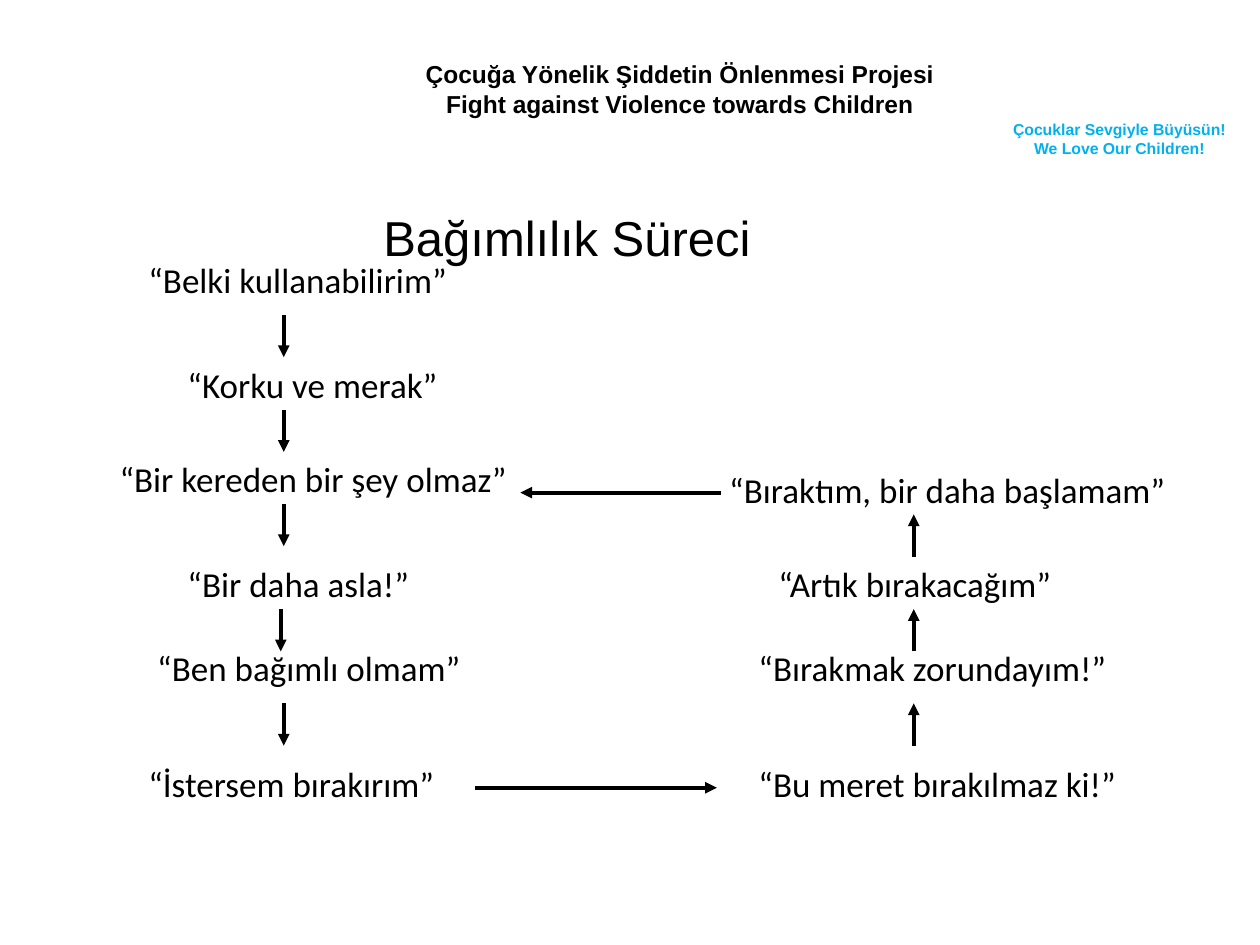
from lxml import etree
from pptx import Presentation
from pptx.dml.color import RGBColor
from pptx.enum.shapes import MSO_CONNECTOR
from pptx.enum.text import MSO_ANCHOR, MSO_AUTO_SIZE, PP_ALIGN
from pptx.oxml.ns import qn
from pptx.util import Cm, Pt

LEFT, CENTER = PP_ALIGN.LEFT, PP_ALIGN.CENTER
TOP, MIDDLE = MSO_ANCHOR.TOP, MSO_ANCHOR.MIDDLE
GROW, FIXED = MSO_AUTO_SIZE.SHAPE_TO_FIT_TEXT, MSO_AUTO_SIZE.NONE
STRAIGHT = MSO_CONNECTOR.STRAIGHT

BLACK, SKY = "000000", "00B0F0"
STAGE_HEIGHT = 1.11
ARROW_LENGTH = 0.85
DOWN_X, UP_X = 5.72, 18.42

# Stages: text, left, top, width in cm
STAGES = [
    ("“Belki kullanabilirim”", 2.74, 5.08, 7.16),
    ("“Korku ve merak”", 3.53, 7.2, 5.59),
    ("“Bir kereden bir şey olmaz”", 2.16, 9.1, 8.41),
    ("“Bir daha asla!”", 3.53, 11.22, 5.03),
    ("“Ben bağımlı olmam”", 2.92, 12.91, 6.68),
    ("“İstersem bırakırım”", 2.74, 15.24, 6.35),
    ("“Bu meret bırakılmaz ki!”", 15.04, 15.24, 7.8),
    ("“Bırakmak zorundayım!”", 15.04, 12.91, 7.59),
    ("“Artık bırakacağım”", 15.44, 11.22, 6.1),
    ("“Bıraktım, bir daha başlamam”", 14.45, 9.31, 9.4),
]

# Vertical arrows: x and top in cm
DOWN_ARROWS = [(DOWN_X, 6.35), (DOWN_X, 8.26), (DOWN_X, 10.16),
               (5.66, 12.28), (DOWN_X, 14.18)]
UP_ARROWS = [(UP_X, 14.18), (UP_X, 12.28), (UP_X, 10.37)]


def rgb(color):
    return RGBColor.from_string(color)


def add_text(slide, lines, left, top, width, height, size, font="Arial",
             color=BLACK, bold=False, align=CENTER, anchor=TOP,
             wrap=False, fit=GROW):
    box = slide.shapes.add_textbox(Cm(left), Cm(top), Cm(width), Cm(height))
    frame = box.text_frame
    frame.text = "\n".join(lines)
    frame.word_wrap = wrap
    frame.auto_size = fit
    frame.vertical_anchor = anchor
    for paragraph in frame.paragraphs:
        paragraph.alignment = align
        for run in paragraph.runs:
            run.font.name = font
            run.font.size = Pt(size)
            run.font.bold = bold
            run.font.color.rgb = rgb(color)


def add_arrow(slide, x1, y1, x2, y2):
    arrow = slide.shapes.add_connector(STRAIGHT, Cm(x1), Cm(y1), Cm(x2), Cm(y2))
    arrow.line.color.rgb = rgb(BLACK)
    arrow.line.width = Pt(2.25)
    etree.SubElement(arrow.line._get_or_add_ln(), qn("a:tailEnd"), type="triangle")
    etree.SubElement(arrow._element.spPr, qn("a:effectLst"))


def main():
    prs = Presentation()
    prs.slide_width, prs.slide_height = Cm(25.4), Cm(19.05)
    slide = prs.slides.add_slide(prs.slide_layouts[6])

    # Project header and motto
    add_text(slide, ["Çocuğa Yönelik Şiddetin Önlenmesi Projesi",
                     "Fight against Violence towards Children"],
             8.31, 1.07, 10.8, 1.45, 14, bold=True)
    add_text(slide, ["Çocuklar Sevgiyle Büyüsün!", "We Love Our Children!"],
             20.14, 2.29, 4.85, 1.02, 9, color=SKY, bold=True)

    # Title
    add_text(slide, ["Bağımlılık Süreci"], 0, 3.18, 22.86, 3.18, 28,
             anchor=MIDDLE, wrap=True, fit=FIXED)

    # Stages of the addiction cycle
    for stage, left, top, width in STAGES:
        add_text(slide, [stage], left, top, width, STAGE_HEIGHT, 20,
                 font="Calibri", align=LEFT)

    # Arrows down the left side, up the right side and across
    for x, top in DOWN_ARROWS:
        add_arrow(slide, x, top, x, top + ARROW_LENGTH)
    for x, top in UP_ARROWS:
        add_arrow(slide, x, top + ARROW_LENGTH, x, top)
    add_arrow(slide, 9.58, 15.88, 14.45, 15.88)
    add_arrow(slide, 14.53, 9.93, 10.49, 9.93)

    prs.save("out.pptx")


if __name__ == "__main__":
    main()
